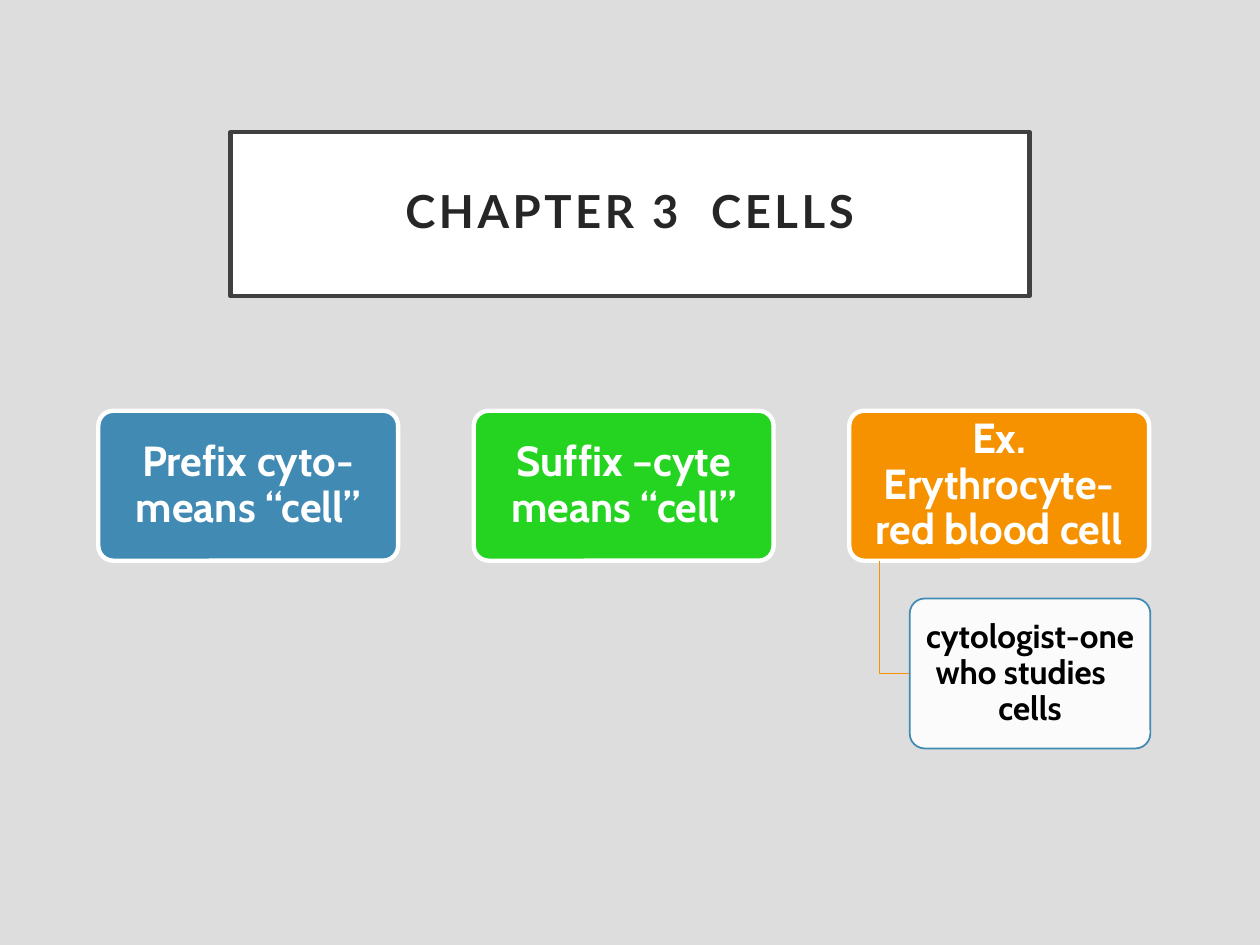
from pptx import Presentation
from pptx.dml.color import RGBColor
from pptx.enum.shapes import MSO_SHAPE as Shape
from pptx.enum.text import MSO_ANCHOR as Anchor, PP_ALIGN as Align
from pptx.oxml.ns import qn
from pptx.util import Inches, Pt
from lxml.etree import SubElement

TERMS = [
    ("Prefix cyto-means “cell”", "418AB3"),
    ("Suffix –cyte means “cell”", "25D421"),
    ("Ex. Erythrocyte- red blood cell", "F69200"),
]
CARD_WIDTH, CARD_HEIGHT, CARD_STEP = 2.38, 1.19, 2.98


def color(hex_code):
    return RGBColor.from_string(hex_code)


def write(owner, text, size, font="Cabin", fill="FFFFFF", inset=(0.05, 0.03), tracking=0):
    frame = owner.text_frame
    frame.word_wrap = True
    frame.vertical_anchor = Anchor.MIDDLE
    frame.margin_left = frame.margin_right = Inches(inset[0])
    frame.margin_top = frame.margin_bottom = Inches(inset[1])
    paragraph = frame.paragraphs[0]
    paragraph.alignment = Align.CENTER
    paragraph.line_spacing = 0.9
    run = paragraph.add_run()
    run.text = text
    run.font.name = font
    run.font.size = Pt(size)
    run.font.bold = True
    run.font.color.rgb = color(fill)
    if tracking:
        run.font._element.set("spc", str(tracking * 100))


def add_box(slide, preset, box, fill, line, weight, opacity=100):
    panel = slide.shapes.add_shape(preset, *map(Inches, box))
    panel.shadow.inherit = False
    panel.fill.solid()
    panel.fill.fore_color.rgb = color(fill)
    panel.line.color.rgb = color(line)
    panel.line.width = Pt(weight)
    if preset == Shape.ROUNDED_RECTANGLE:
        panel.adjustments[0] = 0.1
    if opacity < 100:
        tint = panel.element.spPr.find(qn("a:solidFill")).find(qn("a:srgbClr"))
        SubElement(tint, qn("a:alpha"), val=str(opacity * 1000))
    return panel


def add_title(slide, box):
    banner = add_box(slide, Shape.RECTANGLE, box, "FFFFFF", "404040", 2.5)
    write(banner, "CHAPTER 3  CELLS", 26, font="Lato", fill="262626",
          inset=(0.2, 0.2), tracking=2)


def add_terms(slide, left, top):
    for index, (term, fill) in enumerate(TERMS):
        box = (left + index * CARD_STEP, top, CARD_WIDTH, CARD_HEIGHT)
        card = add_box(slide, Shape.ROUNDED_RECTANGLE, box, fill, "FFFFFF", 2.5)
        write(card, term, 24)


def add_branch(slide, left, top, width, height):
    indent = 0.24
    middle = top + height / 2
    stem_top = top - 0.3
    start = Inches(left - indent), Inches(stem_top)
    bends = [(Inches(left - indent), Inches(middle)), (Inches(left), Inches(middle))]
    builder = slide.shapes.build_freeform(*start)
    builder.add_line_segments(bends, close=False)
    elbow = builder.convert_to_shape()
    elbow.shadow.inherit = False
    elbow.fill.background()
    elbow.line.color.rgb = color("F69200")
    elbow.line.width = Pt(1)

    example = add_box(slide, Shape.ROUNDED_RECTANGLE, (left, top, width, height),
                      "FFFFFF", "418AB3", 1, opacity=90)
    write(example, "cytologist-one who studies \tcells", 19, fill="000000",
          inset=(0.04, 0.03))


def main():
    deck = Presentation()
    deck.slide_width, deck.slide_height = Inches(10), Inches(7.5)
    slide = deck.slides.add_slide(deck.slide_layouts[6])
    slide.background.fill.solid()
    slide.background.fill.fore_color.rgb = color("DDDDDD")
    add_title(slide, (1.83, 1.05, 6.34, 1.3))
    add_terms(slide, 0.78, 3.26)
    add_branch(slide, 7.22, 4.75, 1.91, CARD_HEIGHT)
    deck.save("out.pptx")


if __name__ == "__main__":
    main()
